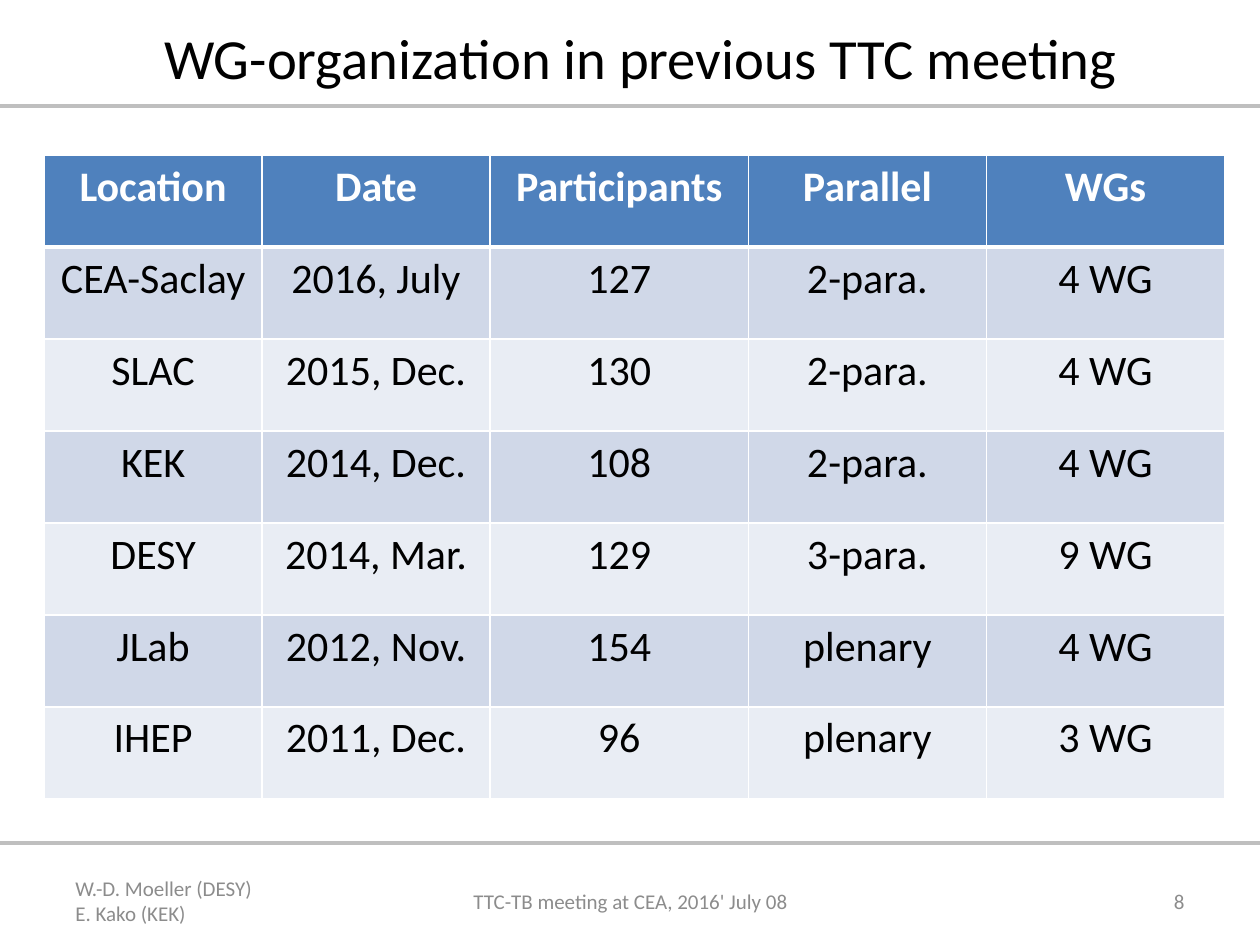
from lxml import etree
from pptx import Presentation
from pptx.dml.color import RGBColor
from pptx.enum.shapes import MSO_CONNECTOR
from pptx.enum.text import MSO_ANCHOR, PP_ALIGN
from pptx.oxml.ns import qn
from pptx.util import Inches, Pt

LEFT, CENTER, RIGHT = PP_ALIGN.LEFT, PP_ALIGN.CENTER, PP_ALIGN.RIGHT
TOP, MIDDLE = MSO_ANCHOR.TOP, MSO_ANCHOR.MIDDLE
STRAIGHT = MSO_CONNECTOR.STRAIGHT

COLORS = {
    "text": "000000", "white": "FFFFFF", "footer": "8C8C8C", "rule": "BFBFBF",
    "header": "4F81BD", "odd": "D0D8E8", "even": "E9EDF4",
}
TITLE = "WG-organization in previous TTC meeting "
ROWS = [
    ("Location", "Date", "Participants", "Parallel", "WGs"),
    ("CEA-Saclay", "2016, July", "127", "2-para.", "4 WG"),
    ("SLAC", "2015, Dec.", "130", "2-para.", "4 WG"),
    ("KEK", "2014, Dec.", "108", "2-para.", "4 WG"),
    ("DESY", "2014, Mar.", "129", "3-para.", "9 WG"),
    ("JLab", "2012, Nov.", "154", "plenary", "4 WG"),
    ("IHEP", "2011, Dec.", "96", "plenary", "3 WG"),
]
FOOTERS = [
    ("W.-D. Moeller (DESY)\vE. Kako (KEK)", 0.5, 2.33, LEFT),
    ("TTC-TB meeting at CEA, 2016' July 08", 3.42, 3.17, CENTER),
    ("8", 7.17, 2.33, RIGHT),
]
WIDTH, HEIGHT = 10, 7.5
RULES = [0.84, 6.69]
COLUMNS = [1.73, 1.81, 2.05, 1.89, 1.89]
TABLE_LEFT, TABLE_TOP, ROW_HEIGHT = 0.35, 1.23, 0.73
FOOTER_TOP, FOOTER_HEIGHT = 6.95, 0.4


def rgb(name):
    return RGBColor.from_string(COLORS[name])


def write(tf, text, align, anchor, color, **font):
    tf.text = text
    tf.word_wrap = True
    tf.vertical_anchor = anchor
    p = tf.paragraphs[0]
    p.alignment = align
    for r in p.runs:
        for name, value in {"name": "Calibri", **font}.items():
            setattr(r.font, name, value)
        r.font.color.rgb = rgb(color)


def add_borders(cell, widths):
    tcPr = cell._tc.get_or_add_tcPr()
    for side, width in widths.items():
        ln = etree.SubElement(tcPr, qn(f"a:ln{side}"), w=str(Pt(width)))
        fill = etree.SubElement(ln, qn("a:solidFill"))
        etree.SubElement(fill, qn("a:srgbClr"), val=COLORS["white"])


def add_rule(slide, y):
    line = slide.shapes.add_connector(STRAIGHT, 0, Inches(y), Inches(WIDTH), Inches(y))
    line.line.color.rgb = rgb("rule")
    line.line.width = Pt(2.25)
    etree.SubElement(line._element.spPr, qn("a:effectLst"))


def add_meetings(slide):
    frame = slide.shapes.add_table(
        len(ROWS), len(COLUMNS), Inches(TABLE_LEFT), Inches(TABLE_TOP),
        Inches(sum(COLUMNS)), Inches(ROW_HEIGHT * len(ROWS)))
    table = frame.table
    for column, width in zip(table.columns, COLUMNS):
        column.width = Inches(width)
    for i, values in enumerate(ROWS):
        table.rows[i].height = Inches(ROW_HEIGHT)
        head = i == 0
        fill = "header" if head else ("even", "odd")[i % 2]
        for j, value in enumerate(values):
            cell = table.cell(i, j)
            add_borders(cell, {"L": 1, "R": 1, "T": 3 if i == 1 else 1, "B": 3 if head else 1})
            cell.fill.solid()
            cell.fill.fore_color.rgb = rgb(fill)
            write(cell.text_frame, value, CENTER, TOP, "white" if head else "text",
                  size=Pt(24), bold=head)
            cell.vertical_anchor = TOP


def main():
    prs = Presentation()
    prs.slide_width, prs.slide_height = Inches(WIDTH), Inches(HEIGHT)
    slide = prs.slides.add_slide(prs.slide_layouts[5])
    title = slide.shapes.title
    title.left, title.top, title.width, title.height = map(Inches, (1.06, 0.13, 8.15, 0.63))
    write(title.text_frame, TITLE, CENTER, TOP, "text", size=Pt(32.4))
    for text, left, width, align in FOOTERS:
        box = slide.shapes.add_textbox(
            *map(Inches, (left, FOOTER_TOP, width, FOOTER_HEIGHT)))
        write(box.text_frame, text, align, MIDDLE, "footer", size=Pt(12))
    for y in RULES:
        add_rule(slide, y)
    add_meetings(slide)
    prs.save("out.pptx")


if __name__ == "__main__":
    main()
